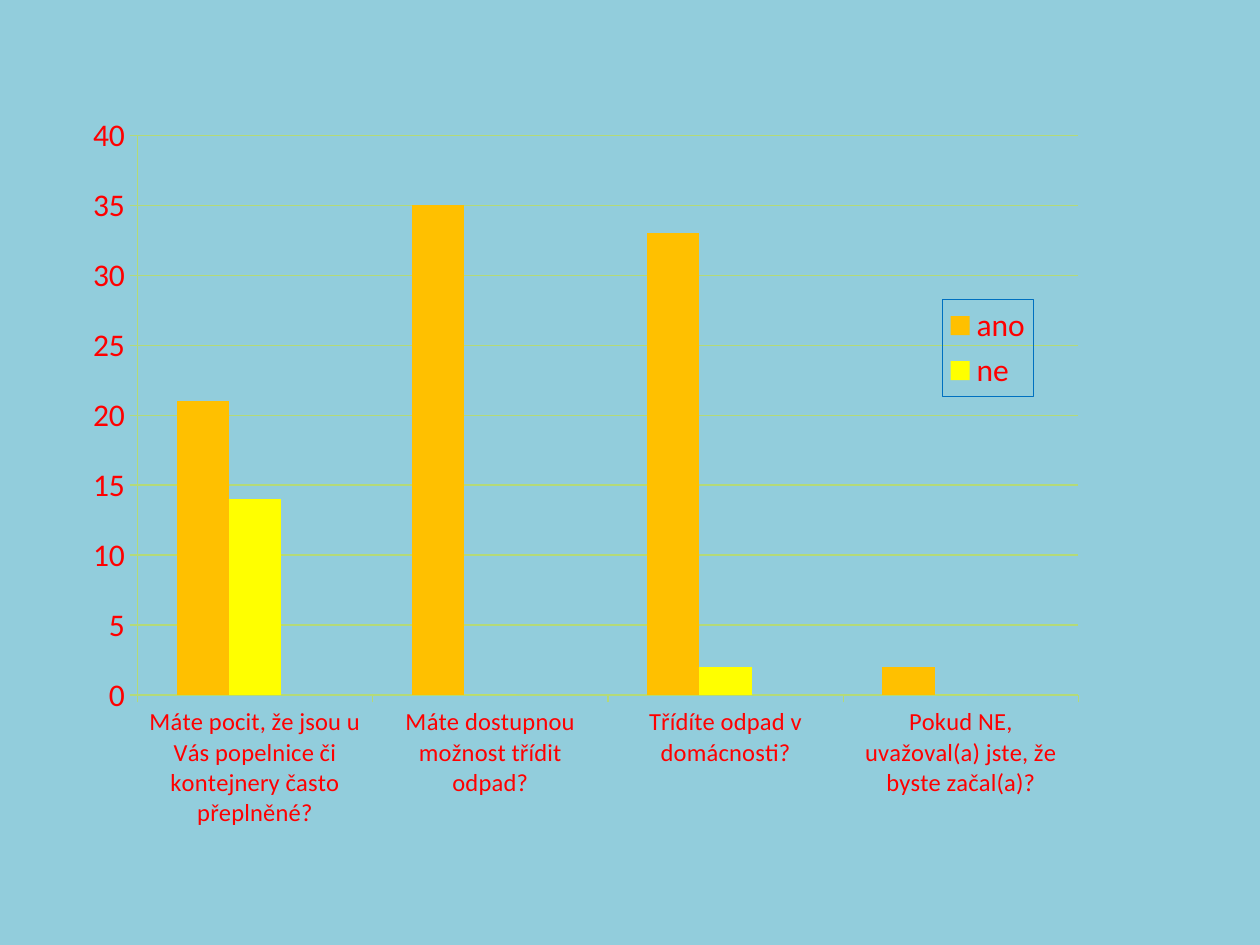
from dataclasses import dataclass
from pptx import Presentation
from pptx.chart.data import CategoryChartData
from pptx.dml.color import RGBColor
from pptx.enum.chart import XL_CHART_TYPE, XL_LEGEND_POSITION, XL_TICK_MARK
from pptx.oxml import parse_xml
from pptx.oxml.ns import nsdecls, qn
from pptx.util import Inches, Pt


@dataclass
class Theme:
    back: RGBColor = RGBColor(0x92, 0xCD, 0xDC)
    text: RGBColor = RGBColor(0xFF, 0, 0)
    grid: RGBColor = RGBColor(0xB4, 0xDA, 0x78)
    frame: RGBColor = RGBColor(0, 0x70, 0xC0)
    bars: tuple = (RGBColor(0xFF, 0xC0, 0), RGBColor(0xFF, 0xFF, 0), RGBColor(0xFF, 0, 0))
    font: str = "Calibri"
    large: int = 18
    small: int = 14


def place(parent, index, box, inner=""):
    for old in parent.findall(qn("c:layout")):
        parent.remove(old)
    modes = '<c:xMode val="edge"/><c:yMode val="edge"/>'
    sizes = "".join(f'<c:{key} val="{val}"/>' for key, val in zip("xywh", box))
    parent.insert(index, parse_xml(
        f'<c:layout {nsdecls("c")}><c:manualLayout>{inner}{modes}{sizes}'
        '</c:manualLayout></c:layout>'))


theme = Theme()
deck = Presentation()
deck.slide_width, deck.slide_height = Inches(10), Inches(7.5)
slide = deck.slides.add_slide(deck.slide_layouts[6])
slide.background.fill.solid()
slide.background.fill.fore_color.rgb = theme.back

data = CategoryChartData()
data.categories = [
    "Máte pocit, že jsou u Vás popelnice či kontejnery často přeplněné?",
    "Máte dostupnou možnost třídit odpad?",
    "Třídíte odpad v domácnosti?",
    "Pokud NE, uvažoval(a) jste, že byste začal(a)?",
]
data.add_series("ano", (21, 35, 33, 2))
data.add_series("ne", (14, 0, 2, 0))
data.add_series("Series 3", (None,) * 4)
chart = slide.shapes.add_chart(
    XL_CHART_TYPE.COLUMN_CLUSTERED,
    Inches(0.55), Inches(0.78), Inches(9), Inches(5.92), data).chart
chart.has_title = False
chart.font.name = theme.font
chart.font.size = Pt(theme.large)
chart.font.color.rgb = theme.text

plot = chart.plots[0]
plot.vary_by_categories = False
plot.gap_width = 150
plot.overlap = 0
for series, color in zip(plot.series, theme.bars):
    series.format.fill.solid()
    series.format.fill.fore_color.rgb = color

values = chart.value_axis
values.minimum_scale, values.maximum_scale, values.major_unit = 0, 40, 5
values.has_major_gridlines = True
for axis, size in ((chart.category_axis, theme.small), (values, theme.large)):
    axis.major_tick_mark = XL_TICK_MARK.OUTSIDE
    axis.minor_tick_mark = XL_TICK_MARK.NONE
    axis.tick_labels.font.size = Pt(size)
    axis.tick_labels.font.color.rgb = theme.text
for part in (chart.category_axis, values, values.major_gridlines):
    part.format.line.color.rgb = theme.grid
    part.format.line.width = Pt(0.75)

chart.has_legend = True
legend = chart.legend
legend.position = XL_LEGEND_POSITION.RIGHT
legend.include_in_layout = False
legend.font.size = Pt(theme.large)
legend.font.color.rgb = theme.text
root = legend._element
place(root, 1, (0.77, 0.27, 0.08, 0.13))
root.insert(1, parse_xml(
    f'<c:legendEntry {nsdecls("c")}><c:idx val="2"/><c:delete val="1"/></c:legendEntry>'))
root.find(qn("c:overlay")).addnext(parse_xml(
    f'<c:spPr {nsdecls("c", "a")}><a:ln w="9525"><a:solidFill>'
    f'<a:srgbClr val="{theme.frame}"/></a:solidFill></a:ln></c:spPr>'))
area = chart._chartSpace.chart.plotArea
place(area, 0, (0.06, 0.05, 0.83, 0.75), '<c:layoutTarget val="inner"/>')

deck.save("out.pptx")
